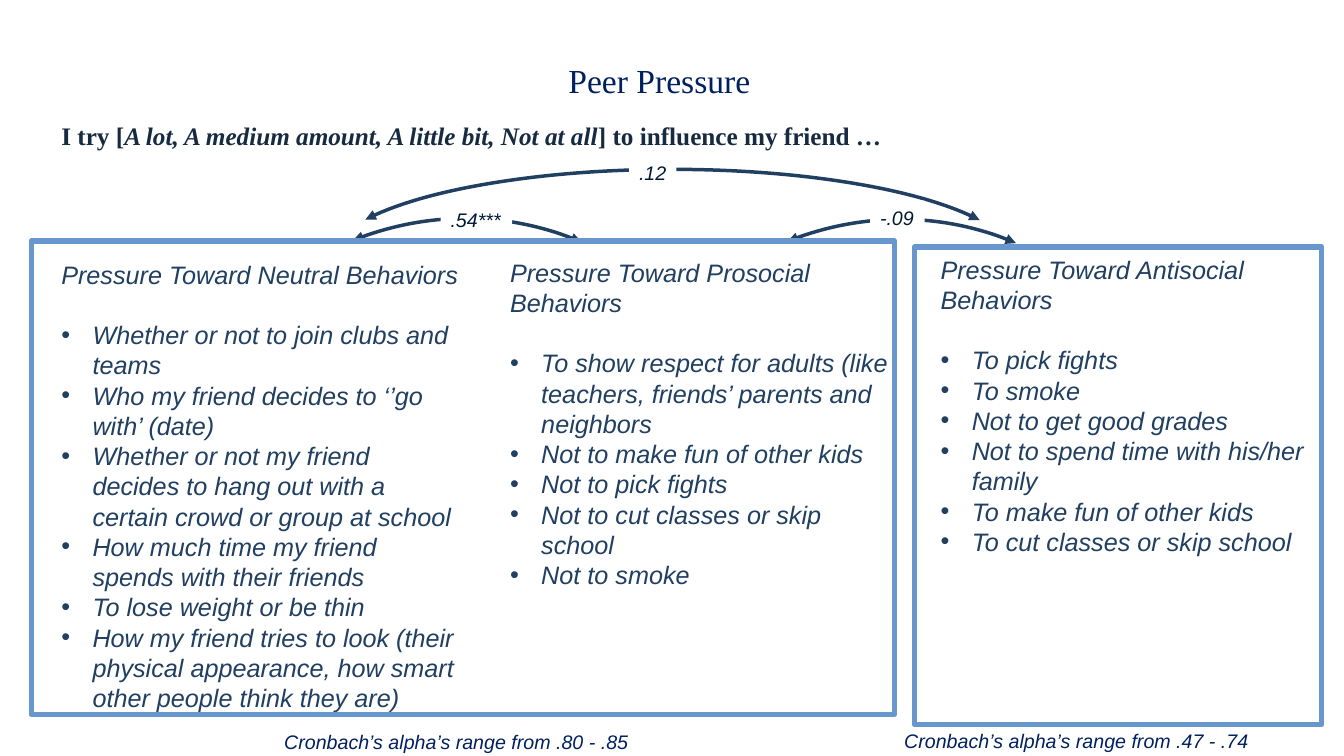
import pptx
import pptx.util
import pptx.dml.color
import pptx.enum.shapes
import pptx.enum.text
import pptx.oxml.ns
import lxml.etree

Inches = pptx.util.Inches
Pt = pptx.util.Pt
RGBColor = pptx.dml.color.RGBColor
Shape = pptx.enum.shapes.MSO_SHAPE
Align = pptx.enum.text.PP_ALIGN
qn = pptx.oxml.ns.qn

NAVY = RGBColor(0x00, 0x20, 0x60)
SLATE = RGBColor(0x20, 0x3F, 0x61)
INK = RGBColor(0x00, 0x19, 0x33)
DARK = RGBColor(0x16, 0x2A, 0x40)
BLUE = RGBColor(0x67, 0x97, 0xCC)
WHITE = RGBColor(0xFF, 0xFF, 0xFF)
SANS, SERIF = "Arial", "Times New Roman"

TITLE = "Peer Pressure"
PROMPT = [
    ("I try [", False),
    ("A lot, A medium amount, A little bit, Not at all", True),
    ("] to influence my friend …", False),
]
COLUMNS = [
    ((4.96, 2.5, 3.98, 3.43), "Pressure Toward Prosocial Behaviors", [
        "To show respect for adults (like teachers, friends’ parents and neighbors",
        "Not to make fun of other kids",
        "Not to pick fights",
        "Not to cut classes or skip school",
        "Not to smoke",
    ]),
    ((0.51, 2.52, 4.17, 4.64), "Pressure Toward Neutral Behaviors", [
        "Whether or not to join clubs and teams",
        "Who my friend decides to ‘’go with’ (date)",
        "Whether or not my friend decides to hang out with a certain crowd or group at school",
        "How much time my friend spends with their friends",
        "To lose weight or be thin",
        "How my friend tries to look (their physical appearance, how smart other people think they are)",
    ]),
    ((9.23, 2.47, 3.98, 3.13), "Pressure Toward Antisocial Behaviors", [
        "To pick fights",
        "To smoke",
        "Not to get good grades",
        "Not to spend time with his/her family",
        "To make fun of other kids",
        "To cut classes or skip school",
    ]),
]
ARCS = [
    ((1, 2.46, 6.94, 6.31), 285.3, (196.81, 4.01)),
    ((5.31, 2.47, 6.94, 6.31), 285.3, (196.81, 4.01)),
    ((3.22, 1.68, 6.89, 1.88), 0, (112.96, 211.12)),
]
LABELS = [
    ((4.37, 2.01, 0.71, 0.34), ".54***"),
    ((6.24, 1.55, 0.47, 0.34), ".12"),
    ((8.63, 1.99, 0.54, 0.34), "-.09"),
]
FRAMES = [(0.31, 2.39, 8.56, 4.7), (9.07, 2.45, 4.04, 4.74)]
ALPHAS = [
    ((2.72, 7.19, 3.63, 0.34), "Cronbach’s alpha’s range from .80 - .85"),
    ((8.87, 7.18, 3.63, 0.34), "Cronbach’s alpha’s range from .47 - .74"),
]

deck = pptx.Presentation()
deck.slide_width, deck.slide_height = Inches(13.33), Inches(7.5)
slide = deck.slides.add_slide(deck.slide_layouts[6])


def style(para, name, size, color, italic=None, bold=None):
    font = para.font
    font.name, font.size, font.italic, font.bold = name, Pt(size), italic, bold
    font.color.rgb = color


def add_box(place, wrap=False):
    box = slide.shapes.add_textbox(*map(Inches, place))
    box.text_frame.word_wrap = wrap
    return box


def add_note(place, text, color):
    box = add_box(place)
    para = box.text_frame.paragraphs[0]
    para.text = text
    style(para, SANS, 14, color, italic=True)
    return box


def add_outline(kind, place, color, width):
    shape = slide.shapes.add_shape(kind, *map(Inches, place))
    shape.shadow.inherit = False
    shape.fill.background()
    shape.line.color.rgb = color
    shape.line.width = Pt(width)
    return shape


def add_bullet(para):
    props = para._p.get_or_add_pPr()
    props.set("marL", str(Inches(0.31)))
    props.set("indent", str(-Inches(0.31)))
    lxml.etree.SubElement(props, qn("a:buFont")).set("typeface", SANS)
    lxml.etree.SubElement(props, qn("a:buChar")).set("char", "•")


def add_column(place, head, items):
    frame = add_box(place, True).text_frame
    for i, text in enumerate([head] + items):
        para = frame.add_paragraph() if i else frame.paragraphs[0]
        para.text = text
        style(para, SANS, 18, SLATE, italic=True)
        if i:
            add_bullet(para)
        else:
            para.space_after = Pt(21.6)


def add_arc(place, turn, ends):
    arc = add_outline(Shape.ARC, place, SLATE, 2.5)
    arc.rotation = turn
    arc.adjustments[0], arc.adjustments[1] = ends
    line = arc.line._get_or_add_ln()
    for tag in ("a:headEnd", "a:tailEnd"):
        lxml.etree.SubElement(line, qn(tag)).set("type", "triangle")


title = add_box((2.04, 0.55, 9, 0.76), True).text_frame.paragraphs[0]
title.text = TITLE
title.alignment = Align.CENTER
style(title, SERIF, 24, NAVY)

for column in COLUMNS:
    add_column(*column)
for arc in ARCS:
    add_arc(*arc)
for place, text in LABELS:
    label = add_note(place, text, INK)
    label.fill.solid()
    label.fill.fore_color.rgb = WHITE
for place in FRAMES:
    add_outline(Shape.RECTANGLE, place, BLUE, 3.75)

prompt = add_box((0.51, 1.14, 8.54, 0.4)).text_frame.paragraphs[0]
style(prompt, SERIF, 18, DARK, bold=True)
for text, slant in PROMPT:
    run = prompt.add_run()
    run.text = text
    run.font.italic = slant

for place, text in ALPHAS:
    add_note(place, text, NAVY)

deck.save("out.pptx")
